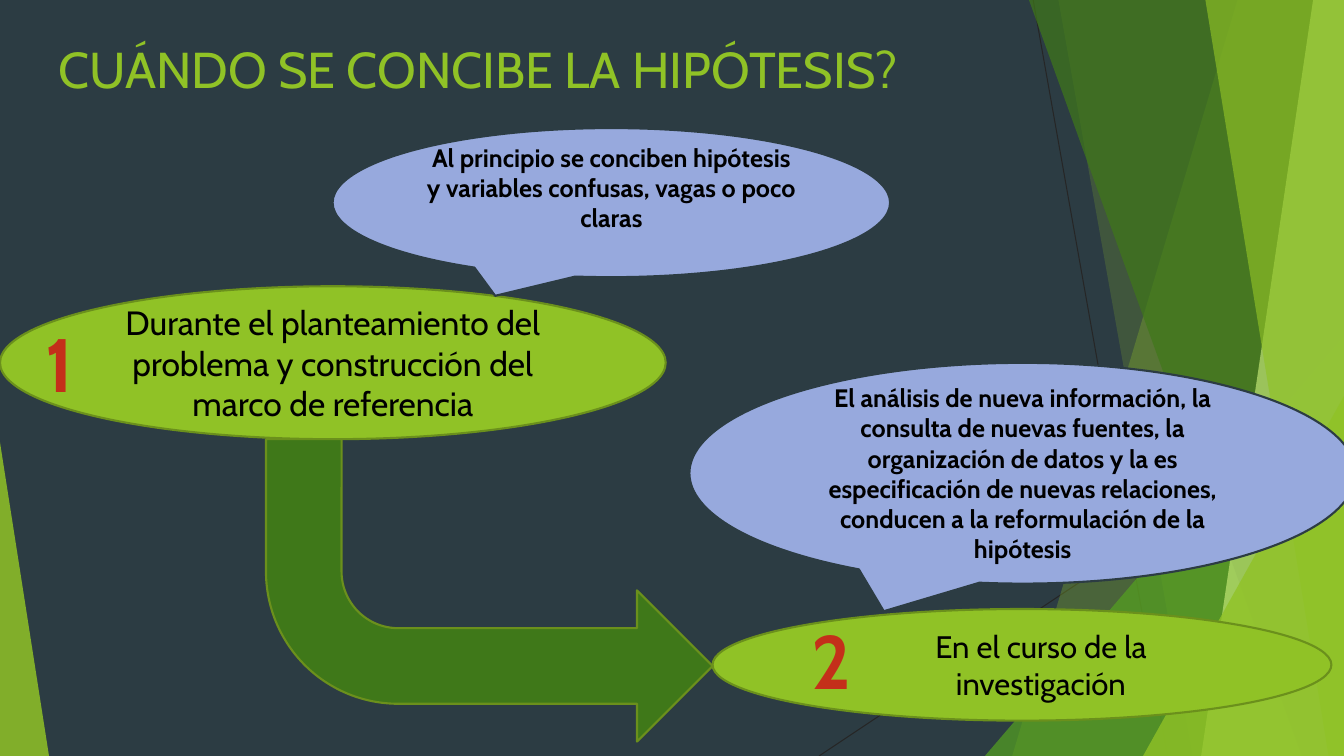
from collections import namedtuple

from lxml import etree
from pptx import Presentation
from pptx import util as u
from pptx.dml import color
from pptx.enum import shapes, text
from pptx.oxml import ns

Pt = u.Pt
Box = namedtuple("Box", "left top width height")
FONT = "Cabin"
COLORS = {
    "night": "2C3C43",
    "hairline": "262626",
    "lime": "90C226",
    "pale": "C0E474",
    "leaf": "54A021",
    "forest": "3F7819",
    "olive": "6B901C",
    "lavender": "97A9DD",
    "ink": "000000",
    "red": "C42F1A",
}


def rgb(name):
    return color.RGBColor.from_string(COLORS[name])


def paint(item, fill, line=None, opacity=100):
    item.shadow.inherit = False
    item.fill.solid()
    item.fill.fore_color.rgb = rgb(fill)
    if opacity < 100:
        tint = item.fill._xPr.find(".//" + ns.qn("a:srgbClr"))
        etree.SubElement(tint, ns.qn("a:alpha"), val=str(opacity * 1000))
    if line:
        item.line.color.rgb = rgb(line)
        item.line.width = Pt(1.5)
    else:
        item.line.fill.background()


def place(slide, kind, box):
    return slide.shapes.add_shape(kind, *(Pt(length) for length in box))


def write(frame, words, size, ink="ink", bold=False, align=text.PP_ALIGN.CENTER):
    frame.text = words
    paragraph = frame.paragraphs[0]
    paragraph.alignment = align
    font = paragraph.runs[0].font
    font.name, font.size, font.bold = FONT, Pt(size), bold
    font.color.rgb = rgb(ink)


def add_hairline(slide, x1, y1, x2, y2):
    hairline = slide.shapes.add_connector(
        shapes.MSO_CONNECTOR.STRAIGHT, Pt(x1), Pt(y1), Pt(x2), Pt(y2))
    hairline.line.color.rgb = rgb("hairline")
    hairline.line.width = Pt(0.75)
    etree.SubElement(hairline._element.spPr, ns.qn("a:effectLst"))


def add_facet(slide, band, top_x, bottom_x, fill, opacity):
    right, bottom = band.left + band.width, band.top + band.height
    outline = slide.shapes.build_freeform(Pt(band.left + top_x), Pt(band.top))
    corners = [(right, band.top), (right, bottom), (band.left + bottom_x, bottom)]
    outline.add_line_segments([(Pt(x), Pt(y)) for x, y in corners], close=True)
    paint(outline.convert_to_shape(), fill, opacity=opacity)


def add_peak(slide, box, apex, fill, opacity):
    peak = place(slide, shapes.MSO_SHAPE.ISOSCELES_TRIANGLE, box)
    peak.adjustments[0] = apex
    paint(peak, fill, opacity=opacity)


def add_corner_peak(slide, band, width, height, fill, opacity):
    corner = Box(band.left + band.width - width,
                 band.top + band.height - height, width, height)
    add_peak(slide, corner, 1, fill, opacity)


def add_backdrop(slide, band):
    right, bottom = band.left + band.width, band.top + band.height
    add_hairline(slide, band.left + 158, band.top, band.left + 254, bottom)
    add_hairline(slide, right, band.top + 290, band.left + 5, bottom)
    add_facet(slide, band, 304, 143, "lime", 30)
    add_facet(slide, band, 176, 272, "lime", 20)
    add_corner_peak(slide, band, 256.5, 300, "leaf", 72)
    add_facet(slide, band, 155, 350, "forest", 70)
    add_facet(slide, band, 358, 278, "pale", 70)
    add_facet(slide, band, 281, 369, "lime", 65)
    add_corner_peak(slide, band, 143.5, 257, "lime", 80)
    add_peak(slide, Box(0, bottom - 224, 35, 224), 0, "lime", 85)


def add_heading(slide, box, words):
    heading = slide.shapes.title
    heading.left, heading.top, heading.width, heading.height = map(Pt, box)
    heading.text_frame.vertical_anchor = text.MSO_ANCHOR.TOP
    write(heading.text_frame, words, 36, "lime", align=text.PP_ALIGN.LEFT)


def add_bubble(slide, kind, box, words, size, fill, line, bold=False,
               extra_left=0, extra_bottom=0):
    bubble = place(slide, kind, box)
    paint(bubble, fill, line)
    frame = bubble.text_frame
    frame.word_wrap = True
    frame.vertical_anchor = text.MSO_ANCHOR.MIDDLE
    frame.margin_left = Pt(7.2 + extra_left)
    frame.margin_bottom = Pt(3.6 + extra_bottom)
    write(frame, words, size, bold=bold)


def add_moment(slide, box, words, size, extra_left=0):
    add_bubble(slide, shapes.MSO_SHAPE.OVAL, box, words, size,
               "lime", "olive", extra_left=extra_left)


def add_remark(slide, box, words, extra_bottom=0):
    add_bubble(slide, shapes.MSO_SHAPE.OVAL_CALLOUT, box, words, 18,
               "lavender", "night", bold=True, extra_bottom=extra_bottom)


def add_passage(slide, box):
    passage = place(slide, shapes.MSO_SHAPE.BENT_ARROW, box)
    paint(passage, "forest", "olive")
    passage._element.spPr.find(ns.qn("a:xfrm")).set("flipV", "1")


def add_number(slide, left, top, digit):
    number = slide.shapes.add_textbox(Pt(left), Pt(top), Pt(46.8), Pt(72.7))
    number.text_frame.word_wrap = False
    write(number.text_frame, digit, 54, "red", bold=True)


def build_hypothesis_slide(deck):
    slide = deck.slides.add_slide(deck.slide_layouts[5])
    slide.background.fill.solid()
    slide.background.fill.fore_color.rgb = rgb("night")
    add_backdrop(slide, Box(580, 0, 380, 540))
    add_heading(slide, Box(34.5, 23.75, 677, 103.7),
                "CUÁNDO SE CONCIBE LA HIPÓTESIS?")

    planning = Box(0, 204.5, 475.5, 109.25)
    course = Box(509, 435, 442, 79.75)
    add_moment(slide, planning,
               "Durante el planteamiento del problema y construcción del "
               "marco de referencia", 24)
    add_moment(slide, course, "En el curso de la investigación", 22.2,
               extra_left=27)
    add_remark(slide, Box(237.6, 91.5, 398.2, 106.5),
               "Al principio se conciben hipótesis y variables confusas, "
               "vagas o poco claras", extra_bottom=21.6)
    add_remark(slide, Box(492.5, 259.2, 476, 157.7),
               "El análisis de nueva información, la consulta de nuevas "
               "fuentes, la organización de datos y la es especificación de "
               "nuevas relaciones, conducen a la reformulación de la hipótesis")
    stem_top = planning.top + planning.height
    add_passage(slide, Box(190, stem_top, course.left - 190, 216))
    add_number(slide, planning.left + 18.7, planning.top + 18, "1")
    add_number(slide, course.left + 61.2, course.top, "2")


def main():
    deck = Presentation()
    deck.slide_width, deck.slide_height = Pt(960), Pt(540)
    build_hypothesis_slide(deck)
    deck.save("out.pptx")


if __name__ == "__main__":
    main()
